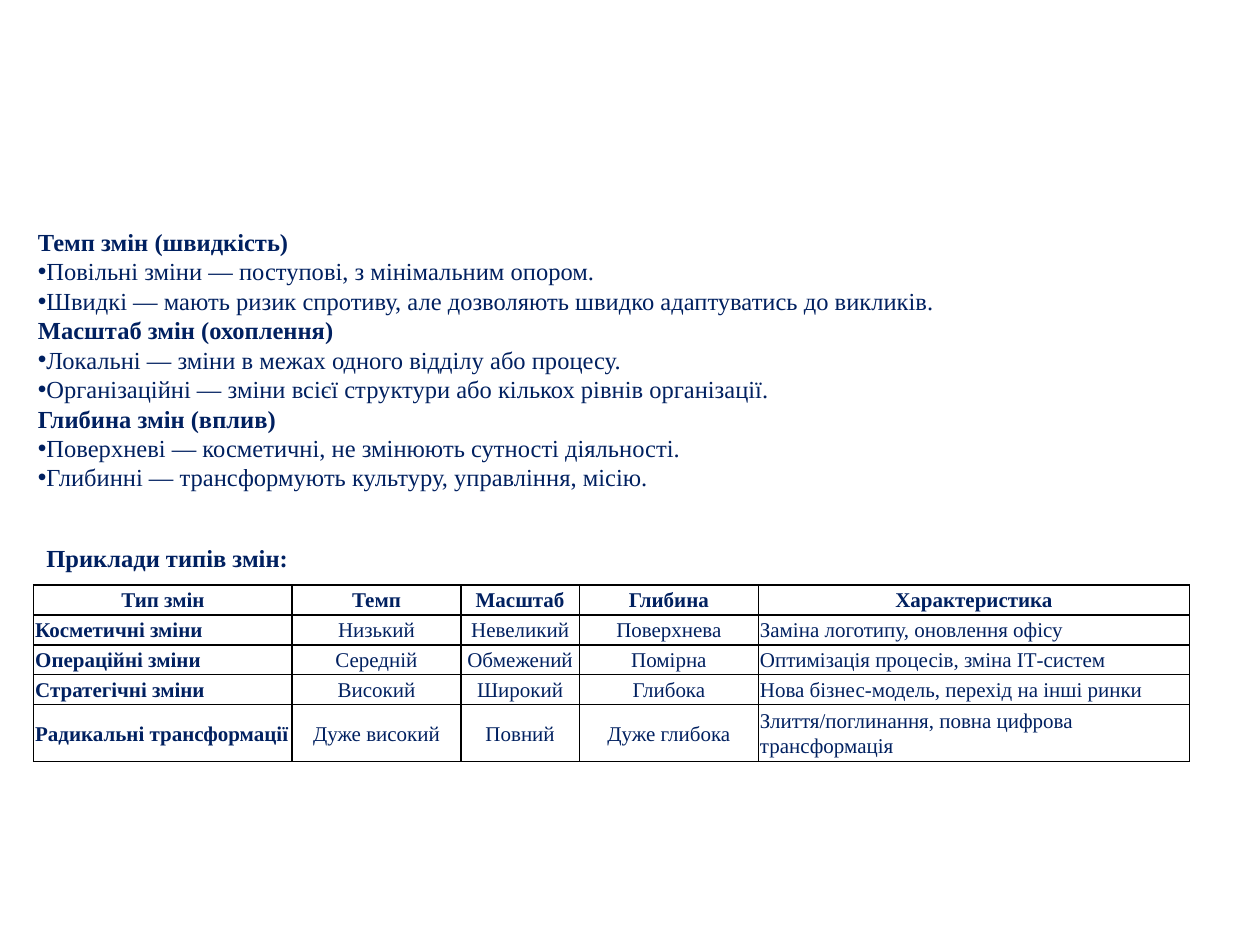
from lxml.etree import SubElement
from pptx import Presentation
from pptx.dml.color import RGBColor
from pptx.enum.text import MSO_ANCHOR, MSO_AUTO_SIZE, PP_ALIGN
from pptx.oxml.ns import qn
from pptx.util import Cm, Pt

COLORS = {"text": "002060", "border": "000000"}
FONT = "Times New Roman"
HEADING = "Приклади типів змін:"
TOPICS = [
    ("Темп змін (швидкість)", [
        "Повільні зміни — поступові, з мінімальним опором.",
        "Швидкі — мають ризик спротиву, але дозволяють швидко адаптуватись до викликів.",
    ]),
    ("Масштаб змін (охоплення)", [
        "Локальні — зміни в межах одного відділу або процесу.",
        "Організаційні — зміни всієї структури або кількох рівнів організації.",
    ]),
    ("Глибина змін (вплив)", [
        "Поверхневі — косметичні, не змінюють сутності діяльності.",
        "Глибинні — трансформують культуру, управління, місію.",
    ]),
]
CHANGES = [
    ("Тип змін", "Темп", "Масштаб", "Глибина", "Характеристика"),
    ("Косметичні зміни", "Низький", "Невеликий", "Поверхнева", "Заміна логотипу, оновлення офісу"),
    ("Операційні зміни", "Середній", "Обмежений", "Помірна", "Оптимізація процесів, зміна ІТ-систем"),
    ("Стратегічні зміни", "Високий", "Широкий", "Глибока", "Нова бізнес-модель, перехід на інші ринки"),
    ("Радикальні трансформації", "Дуже високий", "Повний", "Дуже глибока",
     "Злиття/поглинання, повна цифрова трансформація"),
]
COLUMN_WIDTHS = [5.21, 3.4, 2.39, 3.61, 8.69]
ROW_HEIGHTS = [0.56, 0.56, 0.56, 0.56, 1.09]


def add_span(para, text, size, bold):
    span = para.add_run()
    span.text = text
    span.font.name = FONT
    span.font.size = Pt(size)
    span.font.bold = bold
    span.font.color.rgb = RGBColor.from_string(COLORS["text"])


def place(box, left, top, width, height, anchor):
    box.left, box.top, box.width, box.height = map(Cm, (left, top, width, height))
    frame = box.text_frame
    frame.word_wrap = True
    frame.auto_size = MSO_AUTO_SIZE.SHAPE_TO_FIT_TEXT
    frame.vertical_anchor = anchor
    return frame


def add_topics(body):
    frame = place(body, 0.51, 4.45, 21.21, 5.64, MSO_ANCHOR.TOP)
    lines = [(text, text == topic) for topic, points in TOPICS for text in [topic, *points]]
    for index, (text, is_topic) in enumerate(lines):
        para = frame.add_paragraph() if index else frame.paragraphs[0]
        para.space_before = Pt(0)
        properties = para._p.get_or_add_pPr()
        properties.set("marL", "0")
        properties.set("indent", "0")
        if is_topic:
            SubElement(properties, qn("a:buNone"))
        else:
            SubElement(properties, qn("a:buChar"), char="•")
        add_span(para, text, 14, is_topic)


def add_borders(cell):
    properties = cell._tc.get_or_add_tcPr()
    for side in ("a:lnL", "a:lnR", "a:lnT", "a:lnB"):
        line = SubElement(properties, qn(side), w=str(Pt(1)))
        fill = SubElement(line, qn("a:solidFill"))
        SubElement(fill, qn("a:srgbClr"), val=COLORS["border"])


def add_changes(page):
    table = page.shapes.add_table(
        len(CHANGES), len(COLUMN_WIDTHS), Cm(0.68), Cm(11.79),
        Cm(sum(COLUMN_WIDTHS)), Cm(sum(ROW_HEIGHTS))).table
    table.horz_banding = False
    for column, width in zip(table.columns, COLUMN_WIDTHS):
        column.width = Cm(width)
    for row_index, (row, height, texts) in enumerate(zip(table.rows, ROW_HEIGHTS, CHANGES)):
        row.height = Cm(height)
        for column_index, (cell, text) in enumerate(zip(row.cells, texts)):
            is_header = row_index == 0
            is_centred = is_header or 0 < column_index < len(texts) - 1
            cell.margin_left = cell.margin_right = Cm(0.03)
            cell.margin_top = cell.margin_bottom = Cm(0.03)
            cell.vertical_anchor = MSO_ANCHOR.MIDDLE
            add_borders(cell)
            cell.fill.background()
            para = cell.text_frame.paragraphs[0]
            para.alignment = PP_ALIGN.CENTER if is_centred else PP_ALIGN.LEFT
            para.line_spacing = 1.07
            para.space_after = Pt(8)
            add_span(para, text, 12, is_header or column_index == 0)


def main():
    """Build the slide on the pace, scale and depth of change."""
    deck = Presentation()
    deck.slide_width, deck.slide_height = Cm(25.4), Cm(19.05)
    page = deck.slides.add_slide(deck.slide_layouts[1])
    add_topics(page.placeholders[1])
    add_changes(page)
    title = place(page.shapes.title, 0.68, 10.82, 8.43, 0.86, MSO_ANCHOR.MIDDLE)
    title.paragraphs[0].alignment = PP_ALIGN.LEFT
    add_span(title.paragraphs[0], HEADING, 14, True)
    deck.save("out.pptx")


if __name__ == "__main__":
    main()
